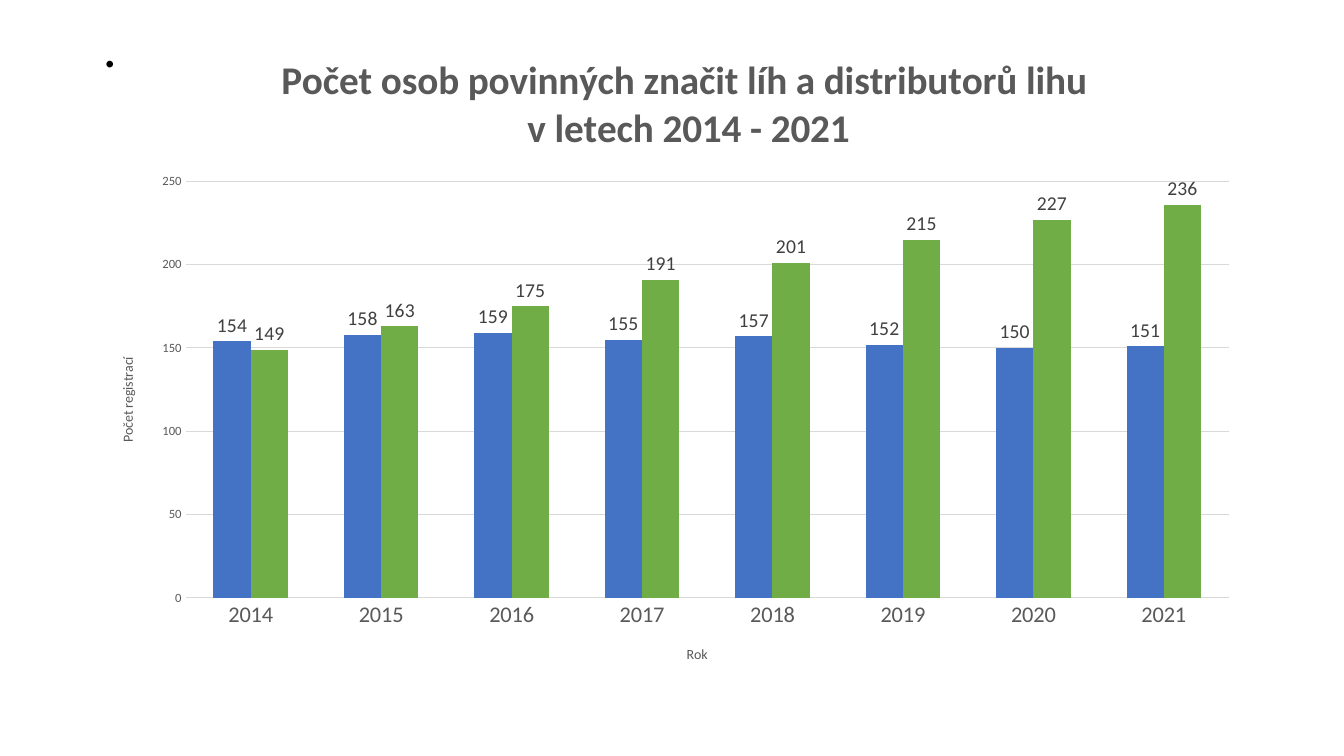
from dataclasses import dataclass

from lxml.etree import SubElement
from pptx import Presentation
from pptx.chart.data import CategoryChartData
from pptx.dml.color import RGBColor
from pptx.enum.chart import XL_CHART_TYPE, XL_LABEL_POSITION, XL_TICK_MARK
from pptx.enum.text import MSO_ANCHOR, PP_ALIGN
from pptx.oxml import parse_xml
from pptx.oxml.ns import nsdecls, qn
from pptx.util import Inches, Pt


@dataclass(frozen=True)
class Theme:
    font: str = "Calibri"
    black: str = "000000"
    label: str = "404040"
    muted: str = "595959"
    grid: str = "D9D9D9"
    series: tuple = ("4472C4", "70AD47")
    slide_title_size: float = 39.6
    chart_title_size: float = 28
    category_size: float = 16
    label_size: float = 14
    axis_title_size: float = 10
    value_size: float = 9


YEARS = [str(year) for year in range(2014, 2022)]
REGISTRATIONS = {
    "Series 1": (154, 158, 159, 155, 157, 152, 150, 151),
    "Series 2": (149, 163, 175, 191, 201, 215, 227, 236),
}
CHART_TITLE = "Počet osob povinných značit líh a distributorů lihu \nv letech 2014 - 2021"


def manual_layout(inner=False, **fractions):
    """Return a c:layout placed by fractions (x, y, w, h) of the chart."""
    layout = parse_xml(f"<c:layout {nsdecls('c')}><c:manualLayout/></c:layout>")
    manual = layout[0]
    if inner:
        SubElement(manual, qn("c:layoutTarget")).set("val", "inner")
    for side in ("x", "y"):
        SubElement(manual, qn(f"c:{side}Mode")).set("val", "edge")
    for name, fraction in fractions.items():
        SubElement(manual, qn(f"c:{name}")).set("val", str(fraction))
    return layout


def remove_layout(element):
    for layout in element.findall(qn("c:layout")):
        element.remove(layout)


class SlideBuilder:
    def __init__(self, presentation, theme):
        self.theme = theme
        self.slide = presentation.slides.add_slide(presentation.slide_layouts[5])

    def style_font(self, font, size, color, bold=False):
        font.name = self.theme.font
        font.size = Pt(size)
        font.bold = bold
        font.color.rgb = RGBColor.from_string(color)

    def add_title(self, text, left, top, width, height):
        title = self.slide.shapes.title
        title.left, title.top = Inches(left), Inches(top)
        title.width, title.height = Inches(width), Inches(height)
        title.text_frame.text = text
        title.text_frame.vertical_anchor = MSO_ANCHOR.MIDDLE
        paragraph = title.text_frame.paragraphs[0]
        paragraph.alignment = PP_ALIGN.LEFT
        paragraph.line_spacing = 0.9
        self.style_font(paragraph.runs[0].font, self.theme.slide_title_size, self.theme.black)

    def add_column_chart(self, categories, series, left, top, width, height):
        data = CategoryChartData()
        data.categories = categories
        for name, values in series.items():
            data.add_series(name, values)
        chart = self.slide.shapes.add_chart(
            XL_CHART_TYPE.COLUMN_CLUSTERED,
            Inches(left), Inches(top), Inches(width), Inches(height), data,
        ).chart
        self.style_font(chart.font, self.theme.axis_title_size, self.theme.black)
        chart.has_legend = False
        plot = chart.plots[0]
        plot.gap_width, plot.overlap = 150, 0
        plot.vary_by_categories = False
        for bars, color in zip(plot.series, self.theme.series):
            bars.format.fill.solid()
            bars.format.fill.fore_color.rgb = RGBColor.from_string(color)
            labels = bars.data_labels
            labels.show_value = True
            labels.position = XL_LABEL_POSITION.OUTSIDE_END
            self.style_font(labels.font, self.theme.label_size, self.theme.label)
        return chart

    def set_chart_title(self, owner, text, size, x, y, bold=False):
        """Title a chart or an axis, with its top left corner at x, y."""
        owner.has_title = True
        title = owner.chart_title if hasattr(owner, "chart_title") else owner.axis_title
        title.text_frame.text = text
        for paragraph in title.text_frame.paragraphs:
            paragraph.alignment = PP_ALIGN.CENTER
            for run in paragraph.runs:
                self.style_font(run.font, size, self.theme.muted, bold)
        remove_layout(title.element)
        title.element.find(qn("c:tx")).addnext(manual_layout(x=x, y=y))
        return title

    def style_axis(self, axis, size):
        axis.major_tick_mark = axis.minor_tick_mark = XL_TICK_MARK.NONE
        axis.format.line.fill.background()
        self.style_font(axis.tick_labels.font, size, self.theme.muted)

    def style_value_scale(self, axis, maximum, step):
        axis.minimum_scale, axis.maximum_scale, axis.major_unit = 0, maximum, step
        axis.has_major_gridlines = True
        line = axis.major_gridlines.format.line
        line.width = Pt(0.75)
        line.color.rgb = RGBColor.from_string(self.theme.grid)

    def place_plot(self, chart, **fractions):
        plot_area = chart.element.find(f"{qn('c:chart')}/{qn('c:plotArea')}")
        remove_layout(plot_area)
        plot_area.insert(0, manual_layout(inner=True, **fractions))


def main():
    presentation = Presentation()
    presentation.slide_width, presentation.slide_height = Inches(13.33), Inches(7.5)
    theme = Theme()
    builder = SlideBuilder(presentation, theme)
    builder.add_title(".", 0.92, 0.4, 11.5, 0.19)

    chart = builder.add_column_chart(YEARS, REGISTRATIONS, 0.92, 0.4, 11.5, 6.36)
    builder.set_chart_title(chart, CHART_TITLE, theme.chart_title_size, 0.16, 0.02, bold=True)
    builder.style_axis(chart.category_axis, theme.category_size)
    builder.set_chart_title(chart.category_axis, "Rok", theme.axis_title_size, 0.51, 0.94)
    builder.style_axis(chart.value_axis, theme.value_size)
    builder.style_value_scale(chart.value_axis, 250, 50)
    value_title = builder.set_chart_title(
        chart.value_axis, "Počet registrací", theme.axis_title_size, 0.02, 0.49
    )
    body = value_title.text_frame.paragraphs[0].runs[0].font and value_title.element.find(
        f"{qn('c:tx')}/{qn('c:rich')}/{qn('a:bodyPr')}"
    )
    body.set("rot", "-5400000")
    body.set("vert", "horz")
    builder.place_plot(chart, x=0.08, y=0.22, w=0.9, h=0.65)

    presentation.save("out.pptx")


if __name__ == "__main__":
    main()
